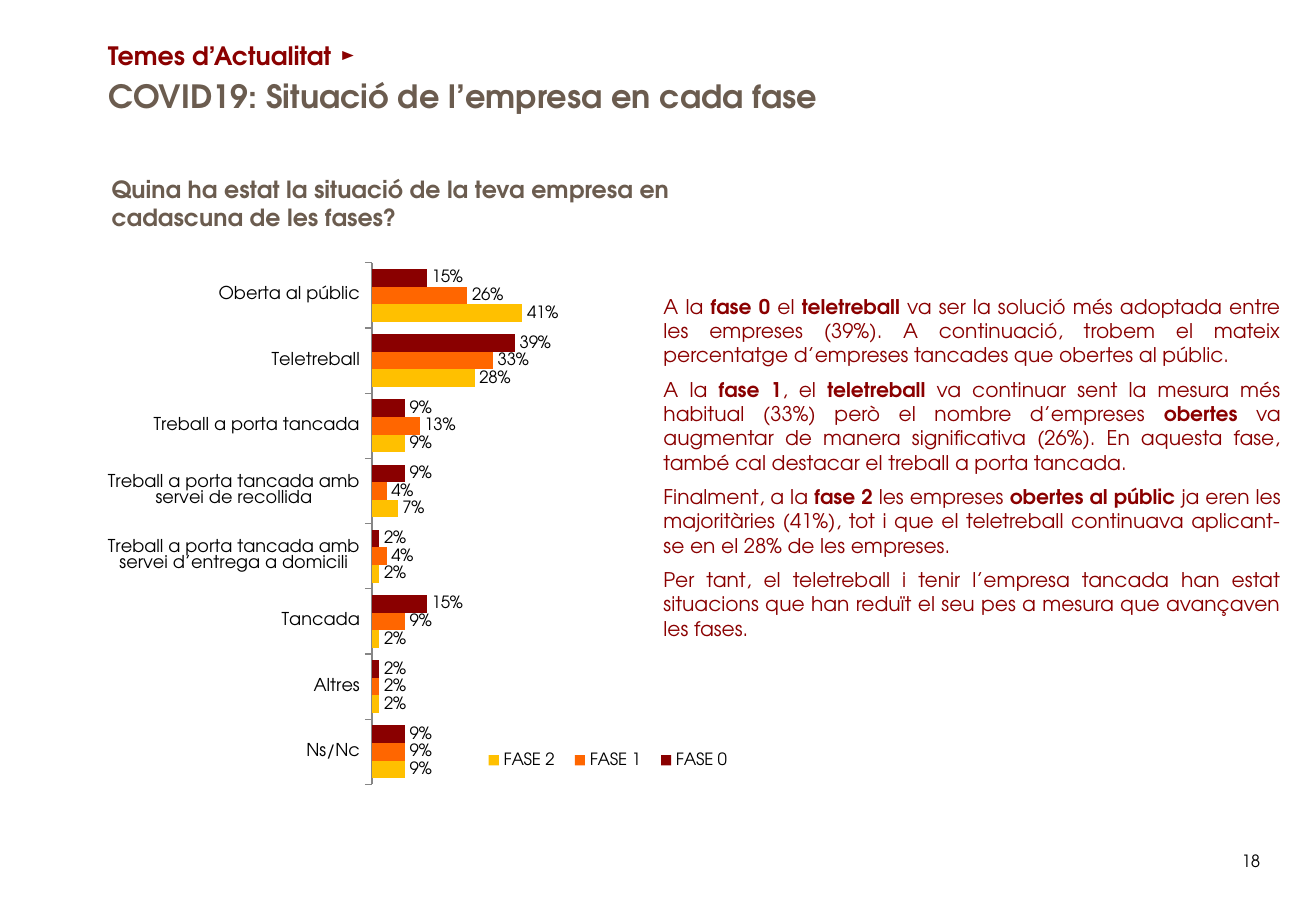
from lxml import etree
from pptx import Presentation
from pptx.chart.data import CategoryChartData
from pptx.dml.color import RGBColor
from pptx.enum.chart import XL_CHART_TYPE as ChartType, XL_LABEL_POSITION as LabelPosition
from pptx.enum.chart import XL_LEGEND_POSITION as LegendPosition, XL_TICK_MARK as TickMark
from pptx.enum.text import MSO_ANCHOR as Anchor, MSO_AUTO_SIZE as AutoSize, PP_ALIGN as Align
from pptx.oxml import parse_xml
from pptx.oxml.ns import nsdecls, qn
from pptx.util import Inches, Pt

FONT = "TeX Gyre Adventor"
COLORS = {"red": "8A0000", "orange": "FF6600", "yellow": "FFC000",
          "brown": "6B5C4F", "black": "000000", "gray": "868686"}


def set_font(font, size, color, bold=False):
    font.name, font.size, font.bold = FONT, Pt(size), bold
    font.color.rgb = RGBColor.from_string(COLORS[color])


def place(box, left, top, width, height, anchor=Anchor.TOP):
    """Move a text shape and give its frame a fixed size and wrapping."""
    box.left, box.top = Inches(left), Inches(top)
    box.width, box.height = Inches(width), Inches(height)
    frame = box.text_frame
    frame.word_wrap, frame.auto_size = True, AutoSize.NONE
    frame.vertical_anchor = anchor
    return frame


deck = Presentation()
deck.slide_width, deck.slide_height = Inches(10.83), Inches(7.5)
page = deck.slides.add_slide(deck.slide_layouts[1])
title, body = page.shapes.title, page.placeholders[1]

# Headings and page number
headings = [
    (title, (0.79, 0.63, 7.95, 0.31, Anchor.MIDDLE),
     "COVID19: Situació de l’empresa en cada fase", 19, "brown", True),
    (None, (0.79, 0.28, 9.56, 0.36, Anchor.MIDDLE), "Temes d’Actualitat ►", 15, "red", True),
    (None, (0.82, 1.39, 5.75, 0.57),
     "Quina ha estat la situació de la teva empresa en cadascuna de les fases?",
     14, "brown", True),
    (None, (10.12, 6.95, 0.67, 0.4), "18", 10, "black", False),
]
for box, spot, text, size, color, bold in headings:
    if box is None:
        box = page.shapes.add_textbox(0, 0, 0, 0)
    frame = place(box, *spot)
    frame.text = text
    para = frame.paragraphs[0]
    para.alignment = Align.LEFT
    set_font(para.font, size, color, bold)

# Commentary: text between bars is bold
comments = [
    "A la |fase 0| el |teletreball| va ser la solució més adoptada entre les empreses (39%). "
    "A continuació, trobem el mateix percentatge d’empreses tancades que obertes al públic.",
    "A la |fase 1|, el |teletreball| va continuar sent la mesura més habitual (33%) però el "
    "nombre d’empreses |obertes| va augmentar de manera significativa (26%). En aquesta fase, "
    "també cal destacar el treball a porta tancada.",
    "Finalment, a la |fase 2 |les empreses |obertes al públic |ja eren les majoritàries (41%), "
    "tot i que el teletreball continuava aplicant-se en el 28% de les empreses.",
    "Per tant, el teletreball i tenir l’empresa tancada han estat situacions que han reduït "
    "el seu pes a mesura que avançaven les fases.",
]
frame = place(body, 5.36, 2.37, 5.28, 2.98)
for row, comment in enumerate(comments):
    para = frame.add_paragraph() if row else frame.paragraphs[0]
    para.alignment = Align.JUSTIFY
    para.space_before = Pt(6 if row else 0)
    properties = para._p.get_or_add_pPr()
    properties.set("marL", "0")
    properties.set("indent", "0")
    etree.SubElement(properties, qn("a:buNone"))
    set_font(para.font, 12, "red")
    for part, text in enumerate(comment.split("|")):
        span = para.add_run()
        span.text = text
        set_font(span.font, 12, "red", part % 2 == 1)

# Bar chart
data = CategoryChartData(number_format="0%")
data.categories = [
    "Oberta al públic", "Teletreball", "Treball a porta tancada",
    "Treball a porta tancada amb servei de recollida",
    "Treball a porta tancada amb servei d’entrega a domicili",
    "Tancada", "Altres", "Ns/Nc"]
phases = [
    ("FASE 0", "red", (0.15, 0.39, 0.09, 0.09, 0.02, 0.15, 0.02, 0.09)),
    ("FASE 1", "orange", (0.26, 0.33, 0.13, 0.04, 0.04, 0.09, 0.02, 0.09)),
    ("FASE 2", "yellow", (0.41, 0.28, 0.09, 0.07, 0.02, 0.02, 0.02, 0.09)),
]
for name, color, values in phases:
    data.add_series(name, values)
chart = page.shapes.add_chart(ChartType.BAR_CLUSTERED, Inches(0.78), Inches(2.06),
                              Inches(5.38), Inches(4.54), data).chart
set_font(chart.font, 10, "black")
chart.has_title = False

plot = chart.plots[0]
plot.gap_width, plot.overlap, plot.vary_by_categories = 70, 0, False
for series, (name, color, values) in zip(plot.series, phases):
    series.format.fill.solid()
    series.format.fill.fore_color.rgb = RGBColor.from_string(COLORS[color])
    labels = series.data_labels
    labels.show_value, labels.position = True, LabelPosition.OUTSIDE_END
    labels.number_format, labels.number_format_is_linked = "0%", False
    set_font(labels.font, 10, "black")

categories, scale = chart.category_axis, chart.value_axis
categories.reverse_order = True
categories.major_tick_mark = TickMark.OUTSIDE
categories.format.line.color.rgb = RGBColor.from_string(COLORS["gray"])
set_font(categories.tick_labels.font, 10.5, "black")
scale.minimum_scale, scale.maximum_scale = 0, 1
scale.has_major_gridlines = scale.visible = False

chart.has_legend = True
legend = chart.legend
legend.position, legend.include_in_layout = LegendPosition.RIGHT, False
set_font(legend.font, 10, "black")

# Shares of the chart's size: left, top, width, height
layouts = [
    (chart._chartSpace.chart.plotArea, '<c:layoutTarget val="inner"/>',
     (0.424, 0.023, 0.561, 0.946)),
    (legend._element, "", (0.58, 0.89, 0.41, 0.07)),
]
for element, target, shares in layouts:
    for old in element.findall(qn("c:layout")):
        element.remove(old)
    modes = '<c:xMode val="edge"/><c:yMode val="edge"/>'
    sizes = "".join(f'<c:{side} val="{share}"/>' for side, share in zip("xywh", shares))
    layout = parse_xml(f'<c:layout {nsdecls("c")}><c:manualLayout>{target}{modes}{sizes}'
                       '</c:manualLayout></c:layout>')
    position = element.find(qn("c:legendPos"))
    element.insert(0 if position is None else 1, layout)

deck.save("out.pptx")
